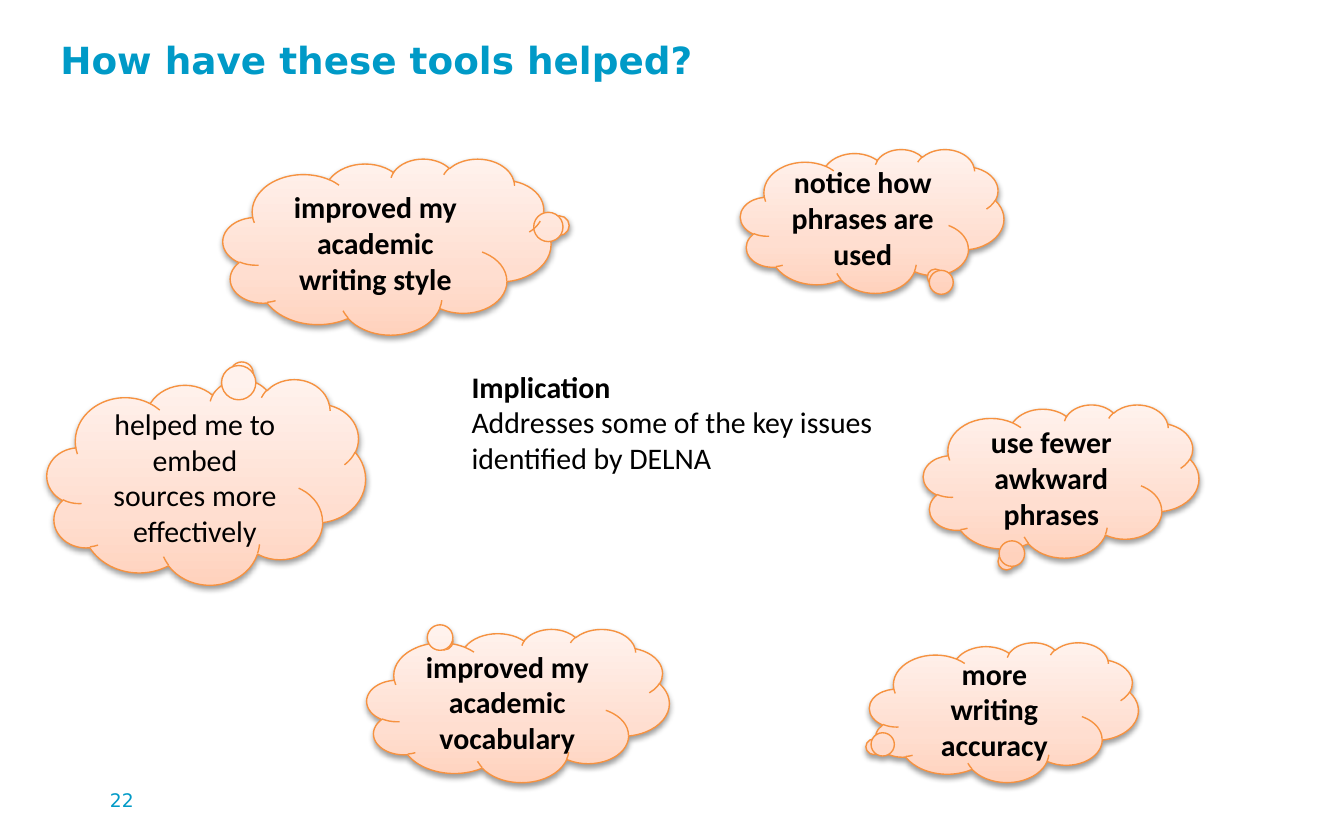
from copy import deepcopy
from dataclasses import dataclass

from lxml import etree
from pptx import Presentation
from pptx.dml.color import RGBColor
from pptx.enum.shapes import MSO_SHAPE
from pptx.enum.text import MSO_ANCHOR, MSO_AUTO_SIZE, PP_ALIGN
from pptx.oxml.ns import qn
from pptx.util import Inches, Pt

BLUE = RGBColor(0x00, 0x9A, 0xC7)
BLACK = RGBColor(0x00, 0x00, 0x00)
ORANGE = RGBColor(0xF6, 0x92, 0x40)
PEACH_STOPS = (
    (0, RGBColor(0xFF, 0xD2, 0xBD)),
    (0.35, RGBColor(0xFF, 0xDE, 0xD0)),
    (1, RGBColor(0xFF, 0xF2, 0xED)),
)
HEADING_FONT = "DejaVu Sans"
BODY_FONT = "Calibri"


@dataclass
class Cloud:
    text: str
    left: float
    top: float
    width: float
    height: float
    tail: tuple[float, float]
    bold: bool = True


CLOUDS = [
    Cloud("helped me to embed sources more effectively", 0.35, 2.82, 2.37, 1.53,
          (0.11, -0.52), bold=False),
    Cloud("improved my academic writing style", 1.66, 1.18, 2.44, 1.31, (0.53, -0.12)),
    Cloud("improved my academic vocabulary", 2.73, 4.68, 2.25, 1.14, (-0.25, -0.43)),
    Cloud("more writing accuracy", 6.47, 4.78, 2, 1.04, (-0.49, 0.25)),
    Cloud("notice how phrases are used", 5.51, 1.11, 1.96, 1.07, (0.24, 0.39)),
    Cloud("use fewer awkward phrases", 6.87, 3.01, 2.05, 1.14, (-0.2, 0.53)),
]


def write_text(paragraph, text: str, *, size: float = 16, font: str = BODY_FONT,
               color: RGBColor = BLACK, bold: bool = False,
               align: PP_ALIGN = PP_ALIGN.LEFT) -> None:
    paragraph.alignment = align
    run = paragraph.add_run()
    run.text = text
    run.font.size = Pt(size)
    run.font.name = font
    run.font.color.rgb = color
    run.font.bold = bold


def add_text_frame(slide, left: float, top: float, width: float, height: float,
                   wrap: bool = True):
    box = slide.shapes.add_textbox(Inches(left), Inches(top), Inches(width), Inches(height))
    box.text_frame.word_wrap = wrap
    return box.text_frame


def fill_peach(shape) -> None:
    """Three-stop gradient, darkest at the bottom."""
    shape.fill.gradient()
    shape.fill.gradient_angle = 90
    stop_list = shape._element.spPr.find(qn("a:gradFill")).find(qn("a:gsLst"))
    stop_list.append(deepcopy(stop_list[-1]))
    for stop, (position, color) in zip(shape.fill.gradient_stops, PEACH_STOPS):
        stop.position = position
        stop.color.rgb = color


def add_soft_shadow(shape) -> None:
    shape.shadow.inherit = False
    effects = shape._element.spPr.find(qn("a:effectLst"))
    shadow = etree.SubElement(effects, qn("a:outerShdw"), blurRad=str(Pt(3.1)),
                              dist=str(Pt(1.6)), dir="5400000", rotWithShape="0")
    color = etree.SubElement(shadow, qn("a:srgbClr"), val=str(BLACK))
    etree.SubElement(color, qn("a:alpha"), val="38000")


def add_cloud(slide, cloud: Cloud) -> None:
    shape = slide.shapes.add_shape(
        MSO_SHAPE.CLOUD_CALLOUT, Inches(cloud.left), Inches(cloud.top),
        Inches(cloud.width), Inches(cloud.height))
    shape.adjustments[0], shape.adjustments[1] = cloud.tail
    fill_peach(shape)
    shape.line.color.rgb = ORANGE
    shape.line.width = Pt(0.75)
    add_soft_shadow(shape)
    frame = shape.text_frame
    frame.word_wrap = True
    frame.vertical_anchor = MSO_ANCHOR.MIDDLE
    write_text(frame.paragraphs[0], cloud.text, bold=cloud.bold, align=PP_ALIGN.CENTER)


def main() -> None:
    presentation = Presentation()
    presentation.slide_width = Inches(10)
    presentation.slide_height = Inches(6.25)
    slide = presentation.slides.add_slide(presentation.slide_layouts[6])

    # Title and slide number
    title = add_text_frame(slide, 0.35, 0.2, 8.78, 0.65)
    title.margin_top = Inches(0.08)
    write_text(title.paragraphs[0], "How have these tools helped?",
               size=20, font=HEADING_FONT, color=BLUE, bold=True)
    number = add_text_frame(slide, 0.72, 5.82, 0.7, 0.43)
    write_text(number.paragraphs[0], "22", size=10, font=HEADING_FONT, color=BLUE)

    # Student comments
    for cloud in CLOUDS:
        add_cloud(slide, cloud)

    # Implication in the middle
    implication = add_text_frame(slide, 3.41, 2.69, 3.22, 0.91, wrap=False)
    implication.auto_size = MSO_AUTO_SIZE.SHAPE_TO_FIT_TEXT
    write_text(implication.paragraphs[0], "Implication", bold=True)
    for line in ("Addresses some of the key issues", "identified by DELNA"):
        write_text(implication.add_paragraph(), line)

    presentation.save("out.pptx")


if __name__ == "__main__":
    main()
